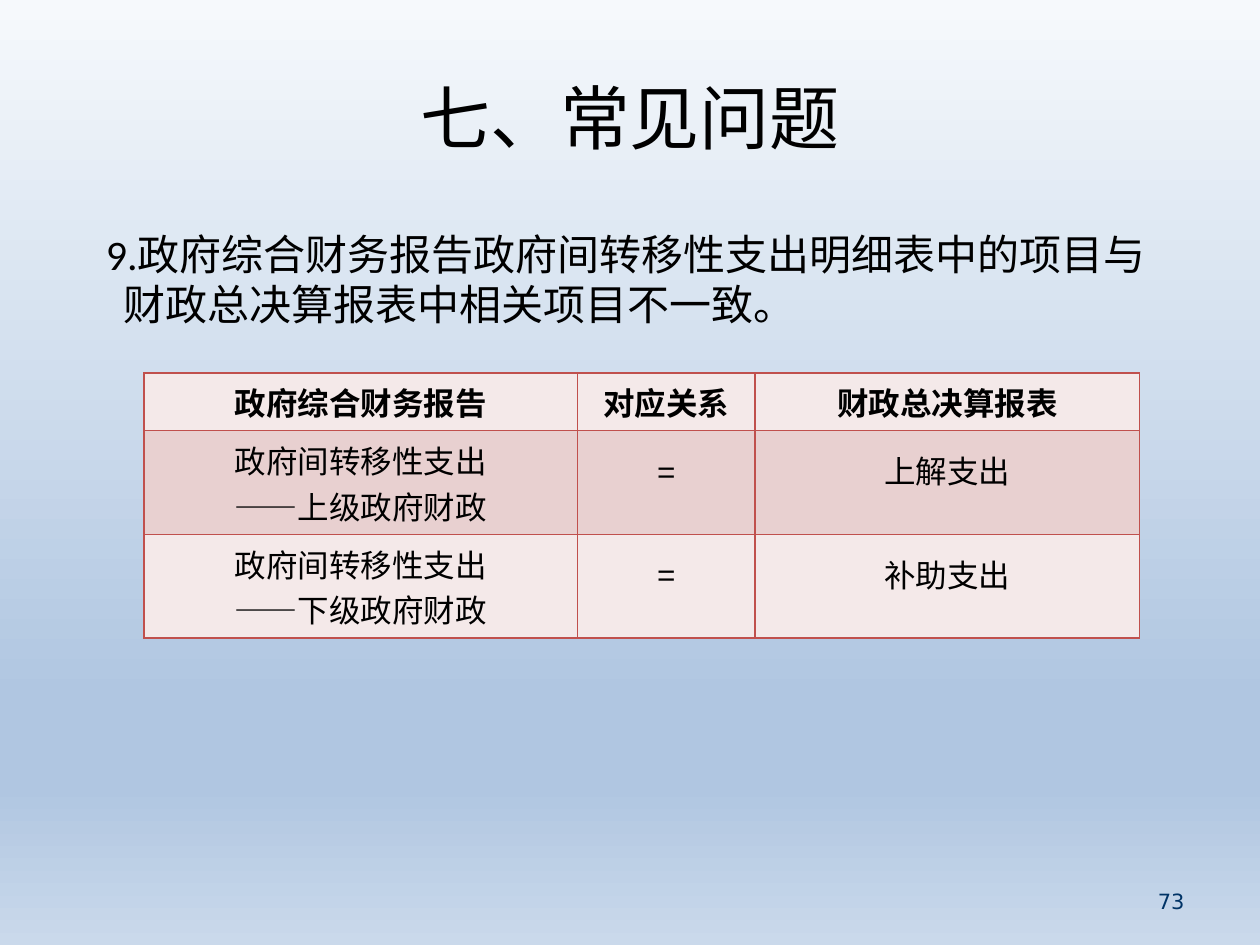
"""Build the slide comparing transfer items across two government reports."""
from dataclasses import dataclass

from lxml.etree import SubElement as Sub
from pptx import Presentation
from pptx.dml.color import RGBColor as RGB
from pptx.enum.text import MSO_ANCHOR as Anchor, MSO_AUTO_SIZE as AutoSize, PP_ALIGN as Align
from pptx.oxml.ns import qn
from pptx.util import Cm, Pt

BORDER = "C0504D"
FILLS = ["F4E9E9", "E8D0D0"]
COL_WIDTHS = [8.74, 3.58, 7.75]
ROW_HEIGHTS = [1.16, 2.09, 2.09]
STOPS = [(0, "F6F9FC"), (74, "B0C6E1"), (83, "B0C6E1"), (100, "CAD9EB")]


@dataclass
class Style:
    size: float
    font: str = "Arial"
    color: str = "000000"
    bold: bool = False
    align: Align = Align.CENTER


@dataclass
class Row:
    report: list[str]
    relation: str
    account: str


ROWS = [
    Row(["政府综合财务报告"], "对应关系", "财政总决算报表"),
    Row(["政府间转移性支出", "——上级政府财政"], "=", "上解支出"),
    Row(["政府间转移性支出", "——下级政府财政"], "=", "补助支出"),
]


def rgb(value: str) -> RGB:
    return RGB.from_string(value)


def place(sp, left: float, top: float, width: float, height: float) -> None:
    sp.left, sp.top, sp.width, sp.height = Cm(left), Cm(top), Cm(width), Cm(height)


def write(tf, lines: list[str], style: Style, spacing=None) -> None:
    tf.word_wrap = True
    for i, line in enumerate(lines):
        p = tf.add_paragraph() if i else tf.paragraphs[0]
        p.alignment = style.align
        p.line_spacing = spacing
        r = p.add_run()
        r.text = line
        r.font.size, r.font.name, r.font.bold = Pt(style.size), style.font, style.bold
        r.font.color.rgb = rgb(style.color)


def paint_background(s) -> None:
    s.background.fill.gradient()
    grad = s._element.find(".//" + qn("a:gradFill"))
    for child in list(grad):
        grad.remove(child)
    stops = Sub(grad, qn("a:gsLst"))
    for pos, color in STOPS:
        gs = Sub(stops, qn("a:gs"), pos=str(pos * 1000))
        Sub(gs, qn("a:srgbClr"), val=color)
    Sub(grad, qn("a:lin"), ang="5400000", scaled="0")


def style_cell(cell, fill: str) -> None:
    tc_pr = cell._tc.get_or_add_tcPr()
    for side in ("lnL", "lnR", "lnT", "lnB"):
        ln = Sub(tc_pr, qn(f"a:{side}"), w=str(Pt(1)))
        Sub(Sub(ln, qn("a:solidFill")), qn("a:srgbClr"), val=BORDER)
    cell.fill.solid()
    cell.fill.fore_color.rgb = rgb(fill)


def add_comparison(s, rows: list[Row]) -> None:
    table = s.shapes.add_table(len(rows), len(COL_WIDTHS), Cm(2.9), Cm(7.52),
                               Cm(sum(COL_WIDTHS)), Cm(sum(ROW_HEIGHTS))).table
    for col, width in zip(table.columns, COL_WIDTHS):
        col.width = Cm(width)
    for i, row in enumerate(rows):
        table.rows[i].height = Cm(ROW_HEIGHTS[i])
        texts = [row.report, [row.relation], [row.account]]
        spacings = [None, 1.5, Pt(32)] if i else [None] * 3
        for j, (lines, spacing) in enumerate(zip(texts, spacings)):
            cell = table.cell(i, j)
            style_cell(cell, FILLS[i % 2])
            write(cell.text_frame, lines, Style(18, bold=i == 0), spacing)


def add_body(s, text: str) -> None:
    sp = s.placeholders[1]
    place(sp, 1.27, 4.47, 22.81, 7.82)
    tf = sp.text_frame
    write(tf, [text], Style(24, "Calibri", align=Align.LEFT))
    tf.auto_size = AutoSize.NONE
    p = tf.paragraphs[0]
    p.space_before = Pt(5)
    p_pr = p._p.get_or_add_pPr()
    p_pr.set("marL", str(Cm(0.97)))
    p_pr.set("indent", str(Cm(-0.36)))
    Sub(p_pr, qn("a:buNone"))


def main() -> None:
    prs = Presentation()
    prs.slide_width, prs.slide_height = Cm(25.4), Cm(19.05)
    s = prs.slides.add_slide(prs.slide_layouts[1])
    paint_background(s)

    title = s.shapes.title
    place(title, 1.27, 0.76, 22.86, 3.18)
    write(title.text_frame, ["七、常见问题"], Style(40))
    title.text_frame.vertical_anchor = Anchor.MIDDLE

    add_body(s, "9.政府综合财务报告政府间转移性支出明细表中的项目与财政总决算报表中相关项目不一致。")

    number = s.shapes.add_textbox(Cm(18.21), Cm(17.65), Cm(5.92), Cm(1.02))
    write(number.text_frame, ["73"], Style(12, "DejaVu Sans", "003366", align=Align.RIGHT))
    number.text_frame.vertical_anchor = Anchor.MIDDLE

    add_comparison(s, ROWS)
    prs.save("out.pptx")


if __name__ == "__main__":
    main()
